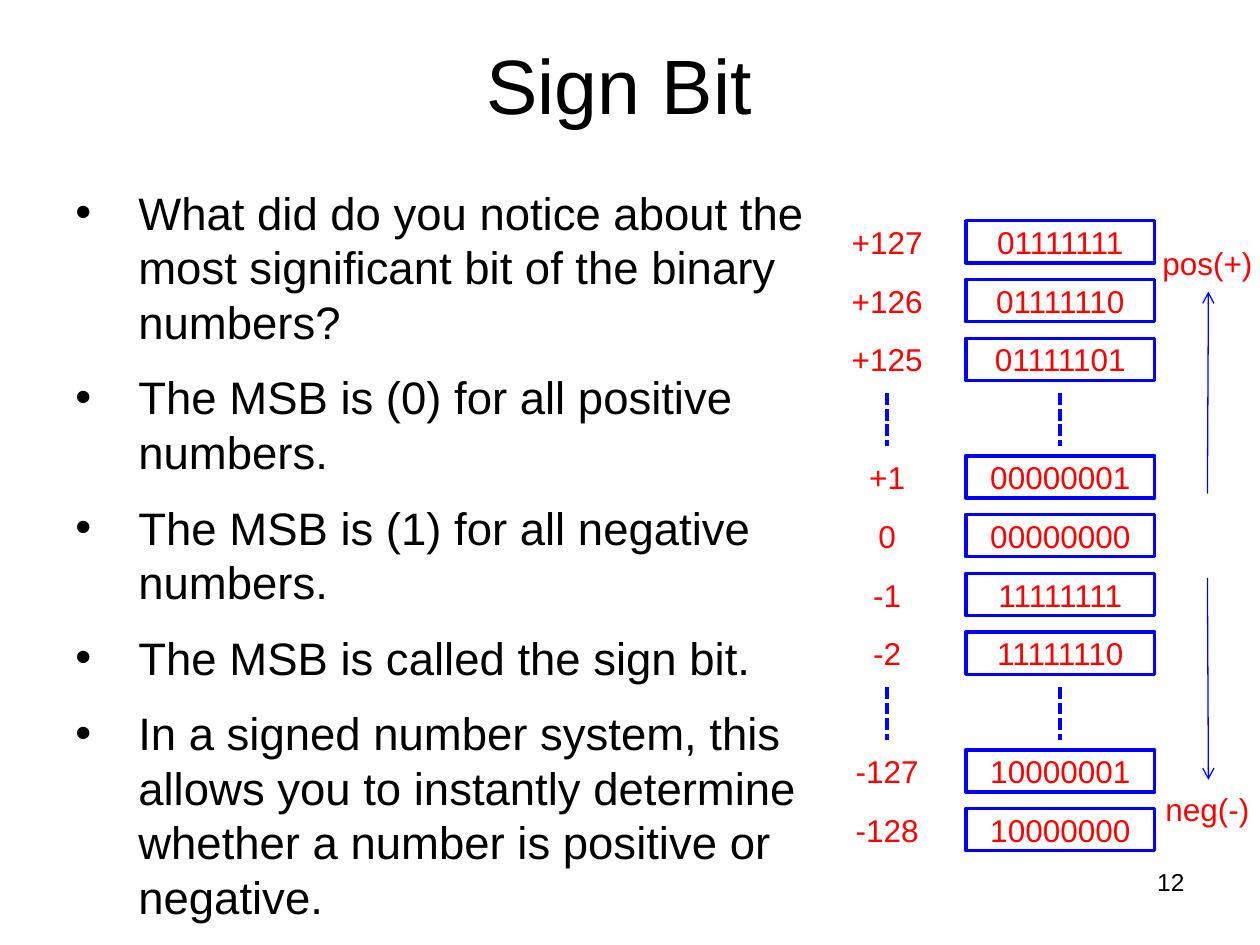
from lxml.etree import SubElement
from pptx import Presentation
from pptx.dml.color import RGBColor
from pptx.enum.dml import MSO_LINE
from pptx.enum.shapes import MSO_CONNECTOR, MSO_SHAPE
from pptx.enum.text import MSO_ANCHOR, MSO_AUTO_SIZE, PP_ALIGN
from pptx.oxml.ns import qn
from pptx.util import Cm, Pt

COLORS = {"text": "000000", "value": "FF0000", "line": "0000FF"}
POINTS = [
    "What did do you notice about the most significant bit of the binary numbers?",
    "The MSB is (0) for all positive numbers.",
    "The MSB is (1) for all negative numbers.",
    "The MSB is called the sign bit.",
    "In a signed number system, this allows you to instantly determine "
    "whether a number is positive or negative.",
]
ROWS = [
    ("+127", "01111111"), ("+126", "01111110"), ("+125", "01111101"), None,
    ("+1", "00000001"), ("0", "00000000"), ("-1", "11111111"), ("-2", "11111110"), None,
    ("-127", "10000001"), ("-128", "10000000"),
]
ROW_HEIGHT = 0.85


def color(name):
    return RGBColor.from_string(COLORS[name])


def write(paragraph, words, size, ink="text", align=PP_ALIGN.LEFT):
    paragraph.text = words
    paragraph.alignment = align
    for key, value in {"name": "Arial", "size": Pt(size)}.items():
        setattr(paragraph.font, key, value)
    paragraph.font.color.rgb = color(ink)


def format_frame(frame, margin, anchor):
    layout = {"word_wrap": True, "auto_size": MSO_AUTO_SIZE.NONE, "vertical_anchor": anchor}
    if margin is not None:
        layout |= {f"margin_{side}": Cm(margin) for side in ("left", "right", "top", "bottom")}
    for key, value in layout.items():
        setattr(frame, key, value)


def add_text(shapes, left, top, width, height, margin=None, anchor=MSO_ANCHOR.TOP):
    frame = shapes.add_textbox(Cm(left), Cm(top), Cm(width), Cm(height)).text_frame
    format_frame(frame, margin, anchor)
    return frame


def add_value(shapes, words, left, top, width):
    frame = add_text(shapes, left, top, width, ROW_HEIGHT, 0, MSO_ANCHOR.MIDDLE)
    write(frame.paragraphs[0], words, 18, "value", PP_ALIGN.CENTER)


def add_code(shapes, bits, left, top, width):
    box = shapes.add_shape(MSO_SHAPE.RECTANGLE, Cm(left), Cm(top), Cm(width), Cm(ROW_HEIGHT))
    box.shadow.inherit = False
    box.fill.background()
    box.line.color.rgb = color("line")
    box.line.width = Pt(2)
    format_frame(box.text_frame, 0, MSO_ANCHOR.MIDDLE)
    write(box.text_frame.paragraphs[0], bits, 18, "value", PP_ALIGN.CENTER)


def add_upright(shapes, x, start, end, weight, lean=0):
    line = shapes.add_connector(MSO_CONNECTOR.STRAIGHT, Cm(x), Cm(start), Cm(x + lean), Cm(end))
    line.line.color.rgb = color("line")
    line.line.width = Pt(weight)
    SubElement(line._element.spPr, qn("a:effectLst"))
    return line


def place_title(slide, left, top, width, height):
    title = slide.shapes.title
    for key, value in {"left": left, "top": top, "width": width, "height": height}.items():
        setattr(title, key, Cm(value))
    format_frame(title.text_frame, None, MSO_ANCHOR.MIDDLE)
    write(title.text_frame.paragraphs[0], "Sign Bit ", 44, align=PP_ALIGN.CENTER)


def place_points(slide, left, top, width, height):
    frame = add_text(slide.shapes, left, top, width, height)
    for index, point in enumerate(POINTS):
        paragraph = frame.add_paragraph() if index else frame.paragraphs[0]
        properties = paragraph._p.get_or_add_pPr()
        properties.set("marL", str(Cm(1.27)))
        properties.set("indent", str(-Cm(1.27)))
        SubElement(properties, qn("a:buFont"), typeface="Arial")
        SubElement(properties, qn("a:buChar"), char="•")
        paragraph.space_after = Pt(12)
        write(paragraph, point, 26)


def place_numbers(slide, left, top, width, height):
    label_width, code_width = 2.75, 3.81
    code_left = left + width - code_width
    pitch = (height - ROW_HEIGHT) / (len(ROWS) - 1)
    codes = slide.shapes.add_group_shape().shapes
    for index, row in enumerate(ROWS):
        y = top + index * pitch
        if row:
            value, bits = row
            add_value(slide.shapes, value, left, y, label_width)
            add_code(codes, bits, code_left, y, code_width)
        else:
            for shapes, x in ((slide.shapes, left + label_width / 2),
                              (codes, code_left + code_width / 2)):
                dash = add_upright(shapes, x, y - 0.08, y + 0.98, 2.25)
                dash.line.dash_style = MSO_LINE.SQUARE_DOT


def place_directions(slide, left, top, width, height):
    middle, reach = top + height / 2, 4.07
    label_tops = {"pos(+)": top, "neg(-)": top + height - ROW_HEIGHT}
    for (words, label_top), sign in zip(label_tops.items(), (-1, 1)):
        start = middle + sign * 0.85
        arrow = add_upright(slide.shapes, left + width / 2, start, start + sign * reach, 0.75, 0.02)
        SubElement(arrow.line._get_or_add_ln(), qn("a:tailEnd"), type="arrow")
        add_value(slide.shapes, words, left, label_top, width)


def place_page_number(slide, left, top, width, height):
    frame = add_text(slide.shapes, left, top, width, height)
    write(frame.paragraphs[0], "12", 14, align=PP_ALIGN.RIGHT)


def main():
    deck = Presentation()
    deck.slide_width, deck.slide_height = Cm(25.4), Cm(19.05)
    slide = deck.slides.add_slide(deck.slide_layouts[5])
    place_title(slide, 0, 0, 25.4, 3.39)
    place_points(slide, 1.27, 3.6, 15.45, 15.45)
    place_page_number(slide, 18.2, 17.36, 5.93, 1.32)
    place_numbers(slide, 16.51, 4.45, 6.77, 12.7)
    place_directions(slide, 23.07, 4.87, 2.54, 11.86)
    deck.save("out.pptx")


if __name__ == "__main__":
    main()
